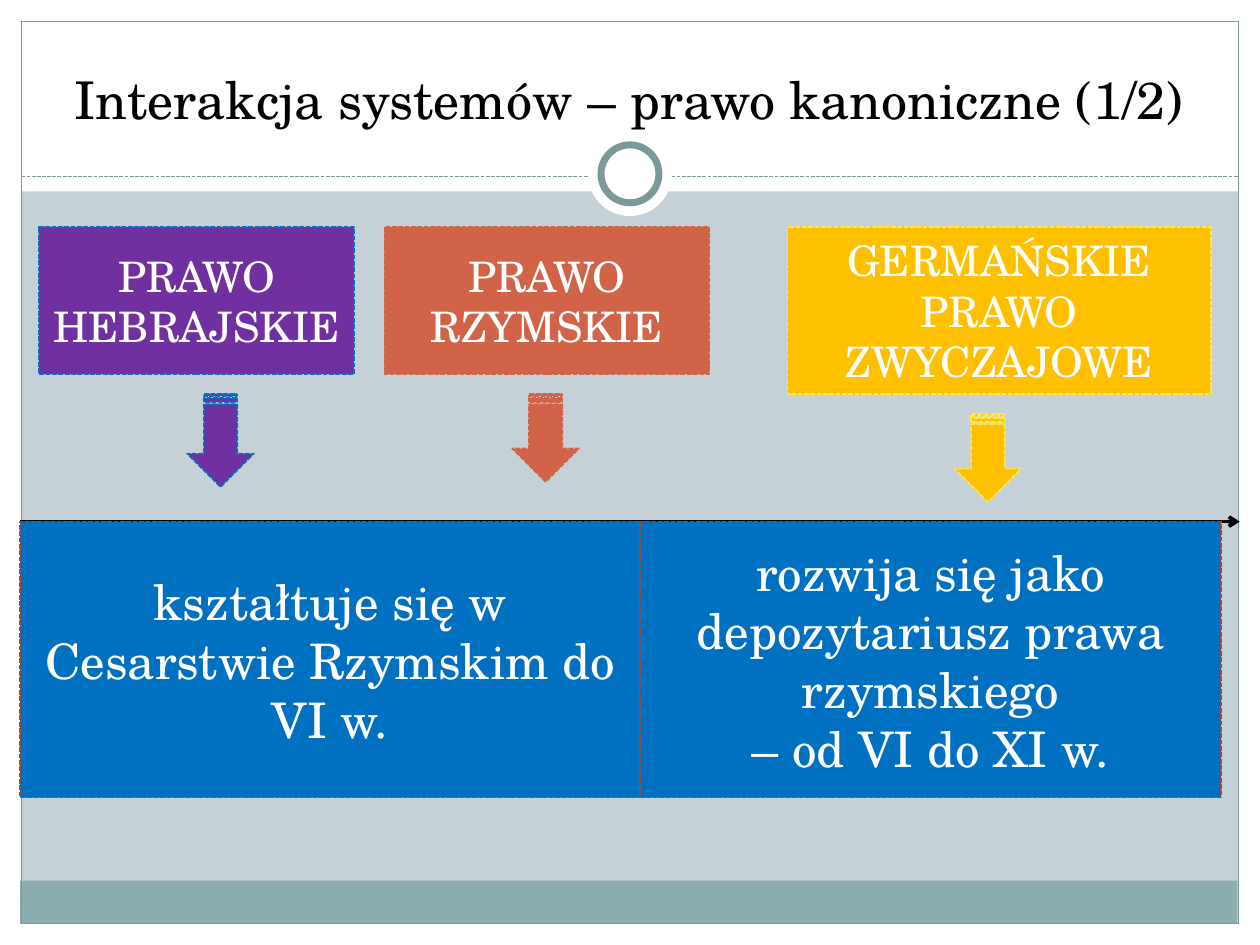
from dataclasses import dataclass
from typing import Optional

from lxml import etree
from pptx import Presentation
from pptx import util as u
from pptx.dml.color import RGBColor
from pptx.enum import dml, shapes, text
from pptx.oxml.ns import qn

Kind = shapes.MSO_SHAPE


@dataclass(frozen=True)
class Theme:
    font: str = "TeX Gyre Schola"
    back: str = "C5D1D7"
    white: str = "FFFFFF"
    black: str = "000000"
    edge: str = "7C999A"
    foot: str = "8CADAE"
    blue: str = "0070C0"
    rust: str = "9B4936"
    red: str = "D16349"
    violet: str = "7030A0"
    gold: str = "FFC000"
    lemon: str = "FFE947"
    head: float = 29.7
    era: float = 28
    law: float = 24
    thin: float = 0.75
    dash: float = 0.9
    ring: float = 4
    axis: float = 2


@dataclass(frozen=True)
class Box:
    left: float
    top: float
    width: float
    height: float


@dataclass(frozen=True)
class Law:
    """A source of law: a labelled box and the arrow below it."""
    label: str
    box: Box
    arrow: Box
    fill: str
    line: str


@dataclass(frozen=True)
class Era:
    """A period on the time axis."""
    label: str
    left: float
    width: float


T = Theme()
WIDE, HIGH, EDGE = 10, 7.5, 0.17
AXIS = 4.14

LAWS = [
    Law("PRAWO RZYMSKIE", Box(3.05, 1.8, 2.58, 1.17),
        Box(3.98, 3.21, 0.7, 0.53), T.red, T.red),
    Law("PRAWO HEBRAJSKIE", Box(0.31, 1.8, 2.5, 1.17),
        Box(1.38, 3.23, 0.74, 0.53), T.violet, T.blue),
    Law("GERMAŃSKIE PRAWO ZWYCZAJOWE", Box(6.25, 1.8, 3.36, 1.33),
        Box(7.49, 3.37, 0.7, 0.53), T.gold, T.lemon),
]
ERAS = [
    Era("kształtuje się w Cesarstwie Rzymskim do VI w.", 0.16, 4.92),
    Era("rozwija się jako depozytariusz prawa rzymskiego\n– od VI do XI w.",
        5.08, 4.61),
]


def paint(line, color: str, width: float, dashed: bool = False) -> None:
    line.color.rgb = RGBColor.from_string(color)
    line.width = u.Pt(width)
    if dashed:
        line.dash_style = dml.MSO_LINE.SQUARE_DOT


def write(shape, words: str, *, size: float, color: str = T.white,
          anchor=text.MSO_ANCHOR.MIDDLE) -> None:
    frame = shape.text_frame
    frame.word_wrap = True
    frame.auto_size = text.MSO_AUTO_SIZE.NONE
    frame.vertical_anchor = anchor
    frame.text = words
    for para in frame.paragraphs:
        para.alignment = text.PP_ALIGN.CENTER
        for run in para.runs:
            run.font.name = T.font
            run.font.size = u.Pt(size)
            run.font.color.rgb = RGBColor.from_string(color)


def draw(slide, box: Box, *, kind=Kind.RECTANGLE, fill: Optional[str] = None,
         line: Optional[str] = None, width: float = T.dash,
         dashed: bool = False):
    shape = slide.shapes.add_shape(
        kind, u.Inches(box.left), u.Inches(box.top),
        u.Inches(box.width), u.Inches(box.height))
    shape.shadow.inherit = False
    if fill:
        shape.fill.solid()
        shape.fill.fore_color.rgb = RGBColor.from_string(fill)
    else:
        shape.fill.background()
    if line:
        paint(shape.line, line, width, dashed)
    else:
        shape.line.fill.background()
    return shape


def rule(slide, start: float, end: float, top: float, *, color: str,
         width: float, dashed: bool = False, arrow: bool = False) -> None:
    link = slide.shapes.add_connector(
        shapes.MSO_CONNECTOR.STRAIGHT, u.Inches(start), u.Inches(top),
        u.Inches(end), u.Inches(top))
    paint(link.line, color, width, dashed)
    if arrow:
        etree.SubElement(link.line._get_or_add_ln(), qn("a:tailEnd"),
                         type="arrow")
    etree.SubElement(link._element.spPr, qn("a:effectLst"))


def disc(slide, size: float, **style) -> None:
    draw(slide, Box((WIDE - size) / 2, 1.38 - size / 2, size, size),
         kind=Kind.OVAL, fill=T.white, **style)


def frame(slide) -> None:
    # White margins and header band
    for box in (Box(0, HIGH - EDGE, WIDE, EDGE), Box(0, 0, WIDE, 1.52),
                Box(0, 0, EDGE, HIGH), Box(WIDE - EDGE, 0, EDGE, HIGH)):
        draw(slide, box, fill=T.white)
    # Footer band, border, divider and ring
    inner = WIDE - 2 * EDGE
    draw(slide, Box(0.16, 6.99, inner, 0.34), fill=T.foot)
    draw(slide, Box(EDGE, EDGE, inner, HIGH - 2 * EDGE),
         line=T.edge, width=T.thin)
    rule(slide, EDGE, WIDE - EDGE, 1.4, color=T.edge, width=T.thin,
         dashed=True)
    disc(slide, 0.67)
    disc(slide, 0.46, line=T.edge, width=T.ring)


def head(slide, words: str) -> None:
    title = slide.shapes.title
    title.left, title.top = u.Inches(0.33), u.Inches(0.25)
    title.width, title.height = u.Inches(9.33), u.Inches(0.83)
    write(title, words, size=T.head, color=T.black,
          anchor=text.MSO_ANCHOR.BOTTOM)
    # Bring the title in front of the header band
    slide.shapes._spTree.append(title._element)


def show_era(slide, era: Era) -> None:
    shape = draw(slide, Box(era.left, AXIS, era.width, 2.19), fill=T.blue,
                 line=T.rust, dashed=True)
    write(shape, era.label, size=T.era)


def show_law(slide, law: Law) -> None:
    arrow = draw(slide, law.arrow, kind=Kind.STRIPED_RIGHT_ARROW,
                 fill=law.fill, line=law.line, dashed=True)
    arrow.rotation = 90
    box = draw(slide, law.box, fill=law.fill, line=law.line, dashed=True)
    write(box, law.label, size=T.law)


def main() -> None:
    deck = Presentation()
    deck.slide_width, deck.slide_height = u.Inches(WIDE), u.Inches(HIGH)
    slide = deck.slides.add_slide(deck.slide_layouts[5])
    slide.background.fill.solid()
    slide.background.fill.fore_color.rgb = RGBColor.from_string(T.back)

    frame(slide)
    head(slide, "Interakcja systemów – prawo kanoniczne (1/2)")
    # Time axis with its periods, then the sources above it
    rule(slide, 0.16, 9.84, AXIS, color=T.black, width=T.axis, arrow=True)
    for era in ERAS:
        show_era(slide, era)
    for law in LAWS:
        show_law(slide, law)
    deck.save("out.pptx")


if __name__ == "__main__":
    main()
